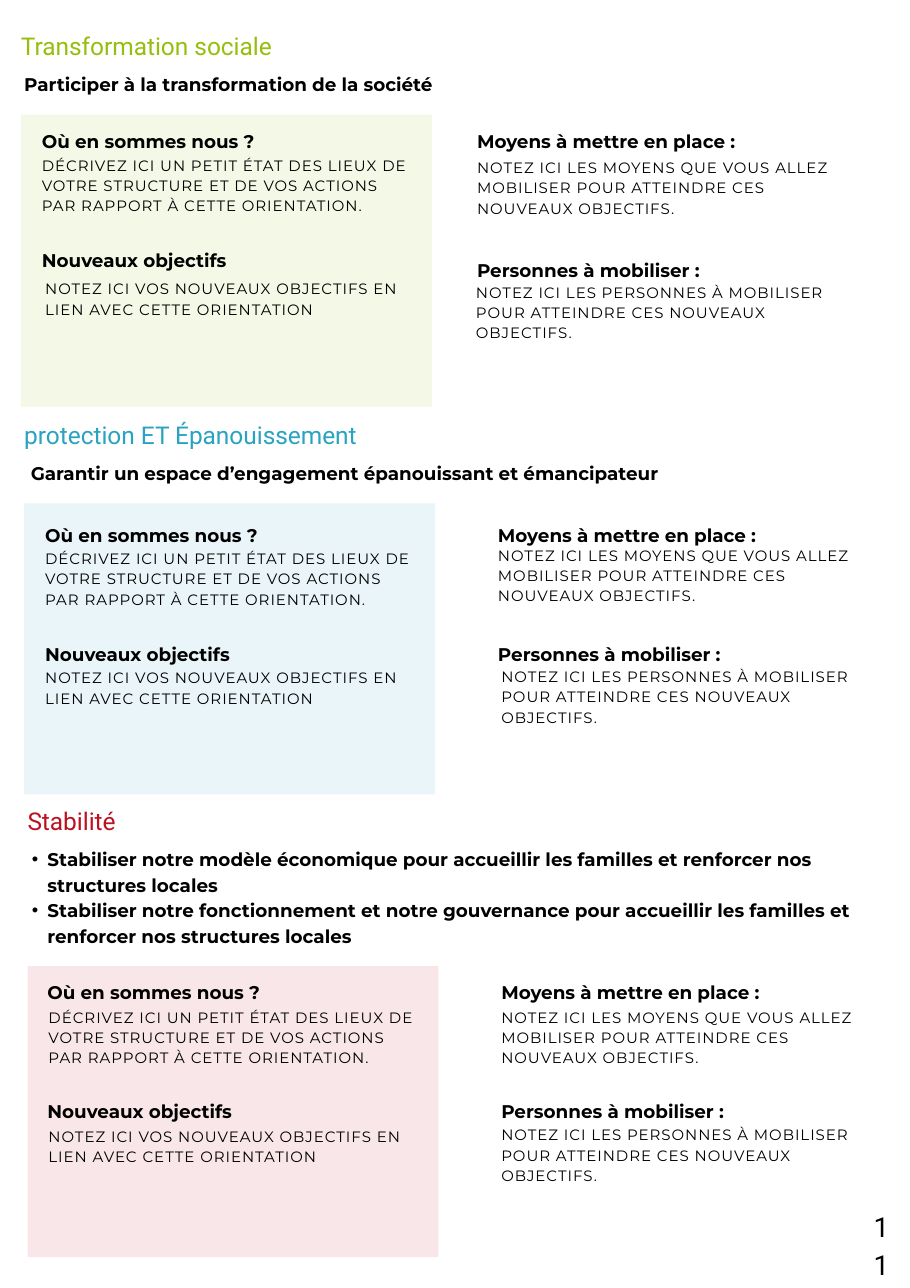
import dataclasses

import lxml.etree
import pptx
import pptx.dml.color
import pptx.enum.shapes
import pptx.enum.text
import pptx.oxml.ns
import pptx.util

RGB = pptx.dml.color.RGBColor
GREEN = RGB(0x96, 0xBF, 0x0D)
BLUE = RGB(0x29, 0xA3, 0xC0)
RED = RGB(0xBC, 0x12, 0x20)
BLACK = RGB(0, 0, 0)

WIDTH, HEIGHT = pptx.util.Inches(8.26), pptx.util.Inches(11.69)
COLUMNS, ROWS = 826, 1169
PANEL_WIDTH = 373
HEADING_TO_GOAL = 39

BLOCKS = [
    ("Où en sommes nous ?", 215, 53,
     "DÉCRIVEZ ICI UN PETIT ÉTAT DES LIEUX DE VOTRE STRUCTURE ET DE VOS ACTIONS "
     "PAR RAPPORT À CETTE ORIENTATION."),
    ("Nouveaux objectifs", 215, 35,
     "NOTEZ ICI VOS NOUVEAUX OBJECTIFS EN LIEN AVEC CETTE ORIENTATION"),
    ("Moyens à mettre en place :", 272, 53,
     "NOTEZ ICI LES MOYENS QUE VOUS ALLEZ MOBILISER POUR ATTEINDRE CES "
     "NOUVEAUX OBJECTIFS."),
    ("Personnes à mobiliser :", 272, 54,
     "NOTEZ ICI LES PERSONNES À MOBILISER POUR ATTEINDRE CES NOUVEAUX OBJECTIFS."),
]


@dataclasses.dataclass
class Section:
    """One orientation: heading, goals, tinted panel and its four blocks."""
    heading: str
    color: RGB
    top: int
    goals: list
    goal_box: tuple
    panel: tuple
    labels: list
    body_shifts: list


SECTIONS = [
    Section("Transformation sociale", GREEN, 24,
            ["Participer à la transformation de la société"],
            (22, 469, 22), (19, 104, 265),
            [(38, 120), (38, 228), (433, 120), (433, 237)],
            [(0, 20), (3, 24), (0, 22), (-1, 18)]),
    Section("protection ET Épanouissement", BLUE, 377,
            ["Garantir un espace d’engagement épanouissant et émancipateur"],
            (28, 657, 22), (22, 457, 264),
            [(41, 477), (41, 585), (452, 477), (452, 585)],
            [(0, 20), (0, 20), (0, 17), (3, 19)]),
    Section("Stabilité", RED, 728,
            ["Stabiliser notre modèle économique pour accueillir les familles "
             "et renforcer nos structures locales",
             "Stabiliser notre fonctionnement et notre gouvernance pour accueillir "
             "les familles et renforcer nos structures locales"],
            (15, 812, 94), (25, 877, 264),
            [(43, 892), (43, 1000), (455, 892), (455, 1000)],
            [(1, 21), (1, 21), (0, 21), (0, 20)]),
]


@dataclasses.dataclass
class Style:
    """Font settings shared by one kind of text."""
    font: str
    size: float
    leading: float
    bold: bool = False
    spacing: int = 0


HEADING = Style("Roboto", 16, 22.1)
GOAL = Style("Montserrat", 12, 16.6, bold=True)
LABEL = Style("Montserrat", 12, 13.2, bold=True)
BODY = Style("Montserrat", 9.8, 13.2, spacing=60)
NUMBER = Style("Roboto", 18, 25.2)


def grid(left, top, width, height):
    """Turn grid columns and rows into slide lengths."""
    return (WIDTH * left // COLUMNS, HEIGHT * top // ROWS,
            WIDTH * width // COLUMNS, HEIGHT * height // ROWS)


def write(sp, lines, style, color=BLACK):
    """Fill a text shape with paragraphs in one style."""
    tf = sp.text_frame
    tf.margin_left = tf.margin_right = tf.margin_top = tf.margin_bottom = 0
    tf.word_wrap = True
    tf.auto_size = pptx.enum.text.MSO_AUTO_SIZE.SHAPE_TO_FIT_TEXT
    tf.vertical_anchor = pptx.enum.text.MSO_ANCHOR.TOP
    tf.text = "\n".join(lines)
    for p in tf.paragraphs:
        p.alignment = pptx.enum.text.PP_ALIGN.LEFT
        p.line_spacing = pptx.util.Pt(style.leading)
        p.space_before = pptx.util.Pt(0)
        for r in p.runs:
            r.font.name = style.font
            r.font.size = pptx.util.Pt(style.size)
            r.font.bold = style.bold
            r.font.color.rgb = color
            if style.spacing:
                r._r.get_or_add_rPr().set("spc", str(style.spacing))


def add_text(slide, box, lines, style, color=BLACK):
    """Add a text box on the grid."""
    sp = slide.shapes.add_textbox(*grid(*box))
    write(sp, lines, style, color)
    return sp


def add_bullets(sp):
    """Give every paragraph a hanging round bullet."""
    for p in sp.text_frame.paragraphs:
        p.level = 1
        pPr = p._p.get_or_add_pPr()
        pPr.set("marL", str(pptx.util.Inches(0.28)))
        pPr.set("indent", str(pptx.util.Inches(-0.14)))
        for tag, name, value in (("a:buFont", "typeface", "Arial"),
                                 ("a:buChar", "char", "•")):
            bullet = lxml.etree.SubElement(pPr, pptx.oxml.ns.qn(tag))
            bullet.set(name, value)


def add_panel(slide, section):
    """Add the tinted rectangle of a section."""
    left, top, height = section.panel
    sp = slide.shapes.add_shape(pptx.enum.shapes.MSO_SHAPE.RECTANGLE,
                                *grid(left, top, PANEL_WIDTH, height))
    sp.shadow.inherit = False
    sp.line.fill.background()
    sp.fill.solid()
    sp.fill.fore_color.rgb = section.color
    color = sp._element.spPr.find(".//" + pptx.oxml.ns.qn("a:srgbClr"))
    alpha = lxml.etree.SubElement(color, pptx.oxml.ns.qn("a:alpha"))
    alpha.set("val", "10000")


def add_heading(slide, section, is_title):
    """Write a section heading, the first one in the title placeholder."""
    box = (section.panel[0], section.top, 353, 30)
    if is_title:
        sp = slide.shapes.title
        sp.left, sp.top, sp.width, sp.height = grid(*box)
        write(sp, [section.heading], HEADING, section.color)
    else:
        add_text(slide, box, [section.heading], HEADING, section.color)


def add_section(slide, section, is_title):
    """Add one whole orientation section."""
    add_heading(slide, section, is_title)
    left, width, height = section.goal_box
    goals = add_text(slide, (left, section.top + HEADING_TO_GOAL, width, height),
                     section.goals, GOAL)
    if len(section.goals) > 1:
        add_bullets(goals)
    add_panel(slide, section)
    for block, (x, y), (dx, dy) in zip(BLOCKS, section.labels, section.body_shifts):
        label, label_width, body_height, body = block
        add_text(slide, (x, y, label_width, 18), [label], LABEL)
        add_text(slide, (x + dx, y + dy, 335, body_height), [body], BODY)


def main():
    """Build the page of orientations."""
    prs = pptx.Presentation()
    prs.slide_width, prs.slide_height = WIDTH, HEIGHT
    slide = prs.slides.add_slide(prs.slide_layouts[5])
    for section in SECTIONS:
        add_section(slide, section, section is SECTIONS[0])
    add_text(slide, (793, 1093, 8, 35), ["11"], NUMBER)
    prs.save("out.pptx")


if __name__ == "__main__":
    main()
